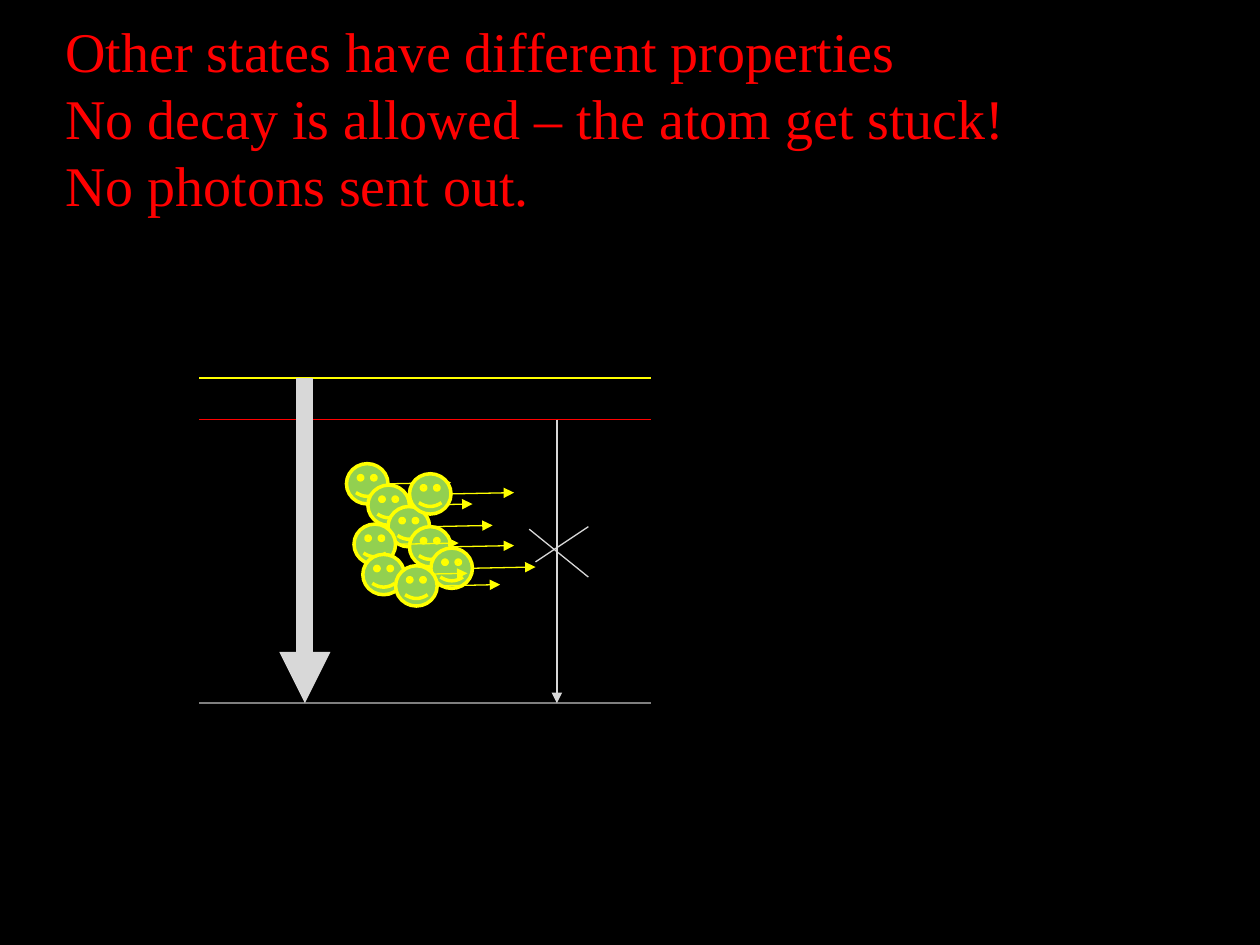
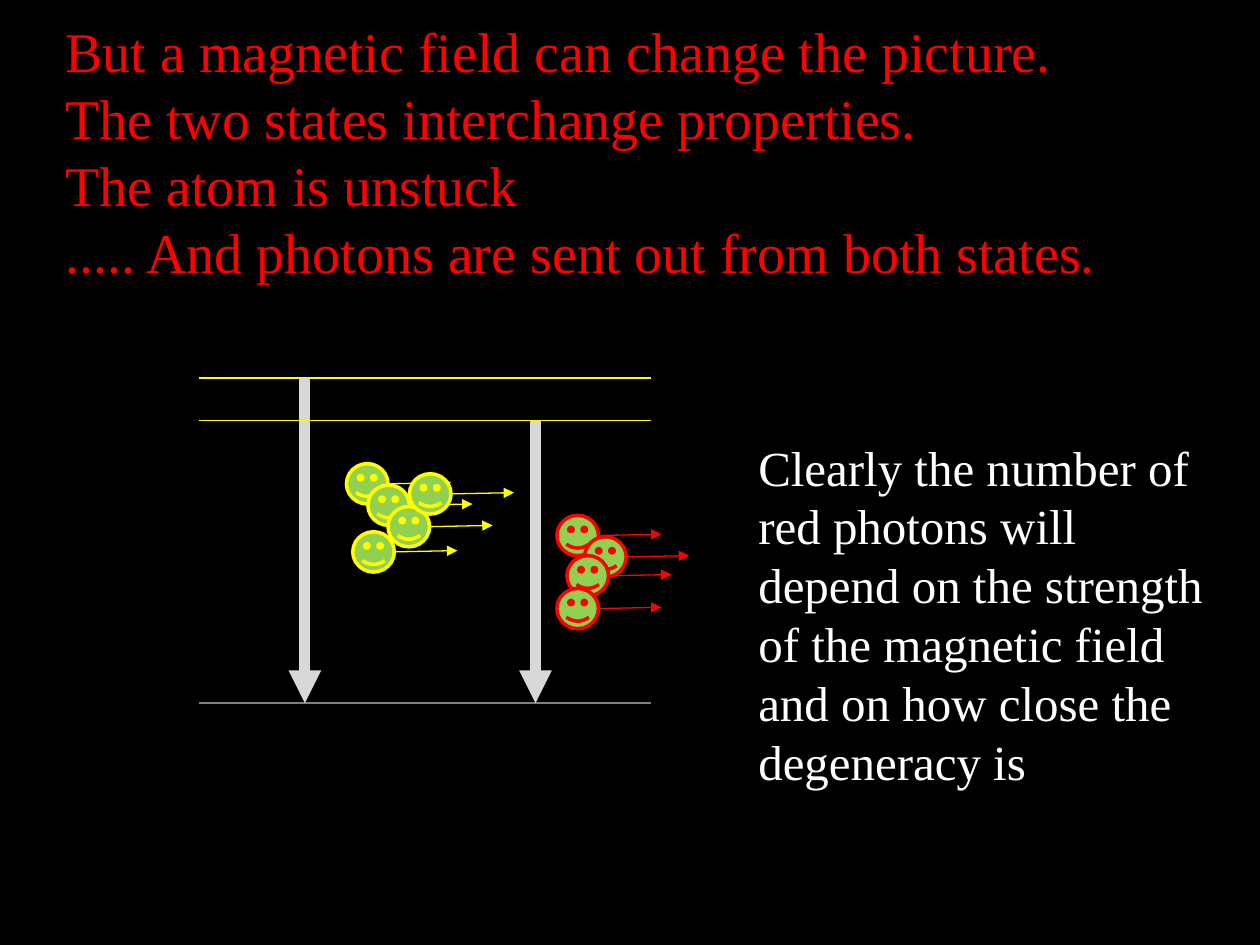
from dataclasses import dataclass

from lxml.etree import SubElement
from pptx import Presentation
from pptx.dml.color import RGBColor
from pptx.enum.shapes import MSO_CONNECTOR as Connector, MSO_SHAPE as Preset
from pptx.oxml.ns import qn
from pptx.util import Inches, Pt

BLACK = RGBColor(0x00, 0x00, 0x00)
WHITE = RGBColor(0xFF, 0xFF, 0xFF)
RED = RGBColor(0xFF, 0x00, 0x00)
YELLOW = RGBColor(0xFF, 0xFF, 0x00)
GREEN = RGBColor(0x92, 0xD0, 0x50)
GRAY = RGBColor(0x7F, 0x7F, 0x7F)
SILVER = RGBColor(0xD8, 0xD8, 0xD8)

FONT = "Times New Roman"
LEVEL_LEFT, LEVEL_RIGHT = 1.58, 5.17
UPPER, LOWER, GROUND = 3.0, 3.33, 5.58
DECAY_X = 2.42
FACE_WIDTH, FACE_HEIGHT = 0.33, 0.32
FLIGHT, RISE = 0.5, 0.01


@dataclass(frozen=True)
class Line:
    x1: float
    y1: float
    x2: float
    y2: float
    color: RGBColor = SILVER
    width: float = 0.75
    arrow: bool = False


@dataclass(frozen=True)
class Photon:
    left: float
    top: float
    color: RGBColor = YELLOW


@dataclass(frozen=True)
class Caption:
    left: float
    top: float
    width: float
    height: float
    paragraphs: tuple[str, ...]
    size: int = 32
    color: RGBColor = RED


def level(y: float, color: RGBColor) -> Line:
    return Line(LEVEL_LEFT, y, LEVEL_RIGHT, y, color)


def decay(x: float, start: float, width: float) -> Line:
    return Line(x, start, x, GROUND, width=width, arrow=True)


def draw_line(shapes, line: Line) -> None:
    connector = shapes.add_connector(
        Connector.STRAIGHT, *map(Inches, (line.x1, line.y1, line.x2, line.y2)))
    connector.line.color.rgb = line.color
    connector.line.width = Pt(line.width)
    properties = connector._element.spPr
    if line.arrow:
        SubElement(properties.find(qn("a:ln")), qn("a:tailEnd"), type="triangle")
    SubElement(properties, qn("a:effectLst"))


def draw_photon(shapes, photon: Photon) -> None:
    """Group a smiling face with the arrow that shows its flight."""
    group = shapes.add_group_shape().shapes
    face = group.add_shape(Preset.SMILEY_FACE, *map(
        Inches, (photon.left, photon.top, FACE_WIDTH, FACE_HEIGHT)))
    face.shadow.inherit = False
    face.fill.solid()
    face.fill.fore_color.rgb = GREEN
    face.line.color.rgb = photon.color
    face.line.width = Pt(2)
    x, y = photon.left + FACE_WIDTH, photon.top + FACE_HEIGHT / 2
    draw_line(group, Line(x, y, x + FLIGHT, y - RISE, photon.color, arrow=True))


def draw_caption(shapes, caption: Caption) -> None:
    box = shapes.add_textbox(*map(
        Inches, (caption.left, caption.top, caption.width, caption.height)))
    frame = box.text_frame
    frame.word_wrap = True
    frame.text = "\n".join(caption.paragraphs)
    font_format = {"name": FONT, "size": Pt(caption.size)}
    for paragraph in frame.paragraphs:
        font = paragraph.runs[0].font
        for attribute, value in font_format.items():
            setattr(font, attribute, value)
        font.color.rgb = caption.color


DRAWERS = {Line: draw_line, Photon: draw_photon, Caption: draw_caption}

STUCK_ATOM = (
    level(UPPER, YELLOW),
    level(LOWER, RED),
    level(GROUND, GRAY),
    decay(DECAY_X, UPPER, 9.75),
    Photon(2.75, 3.68),
    Photon(2.92, 3.85),
    Photon(3.08, 4.02),
    Photon(3.25, 4.18),
    Photon(3.25, 3.76),
    Photon(2.81, 4.16),
    Photon(3.42, 4.35),
    Photon(2.88, 4.40),
    Photon(3.14, 4.49),
    decay(4.42, LOWER, 0.75),
    Line(4.67, 4.18, 4.25, 4.46),
    Line(4.2, 4.2, 4.67, 4.58),
    Caption(0.42, 0.08, 9.58, 1.72, (
        "Other states have different properties",
        "No decay is allowed – the atom get stuck!",
        "No photons sent out.",
    )),
)

UNSTUCK_ATOM = (
    level(UPPER, YELLOW),
    level(GROUND, GRAY),
    decay(DECAY_X, UPPER, 6.25),
    Photon(2.75, 3.68),
    Photon(2.92, 3.85),
    Photon(3.08, 4.02),
    Photon(4.42, 4.09, RED),
    Photon(3.25, 3.76),
    Photon(4.64, 4.26, RED),
    Photon(2.80, 4.22),
    Photon(4.50, 4.41, RED),
    Photon(4.42, 4.67, RED),
    decay(4.25, LOWER, 6.25),
    Caption(0.42, 0.08, 9.58, 2.26, (
        "But a magnetic field can change the picture.",
        "The two states interchange properties.",
        "The atom is unstuck",
        "..... And photons are sent out from both states.",
    )),
    level(LOWER + 0.01, YELLOW),
    Caption(5.92, 3.42, 3.92, 2.93, (
        "Clearly the number of red photons will depend on the strength of the "
        "magnetic field and on how close the degeneracy is",
    ), size=28, color=WHITE),
)


def main() -> None:
    deck = Presentation()
    deck.slide_width, deck.slide_height = Inches(10), Inches(7.5)
    for scene in (STUCK_ATOM, UNSTUCK_ATOM):
        slide = deck.slides.add_slide(deck.slide_layouts[6])
        slide.background.fill.solid()
        slide.background.fill.fore_color.rgb = BLACK
        for part in scene:
            DRAWERS[type(part)](slide.shapes, part)
    deck.save("out.pptx")


if __name__ == "__main__":
    main()
